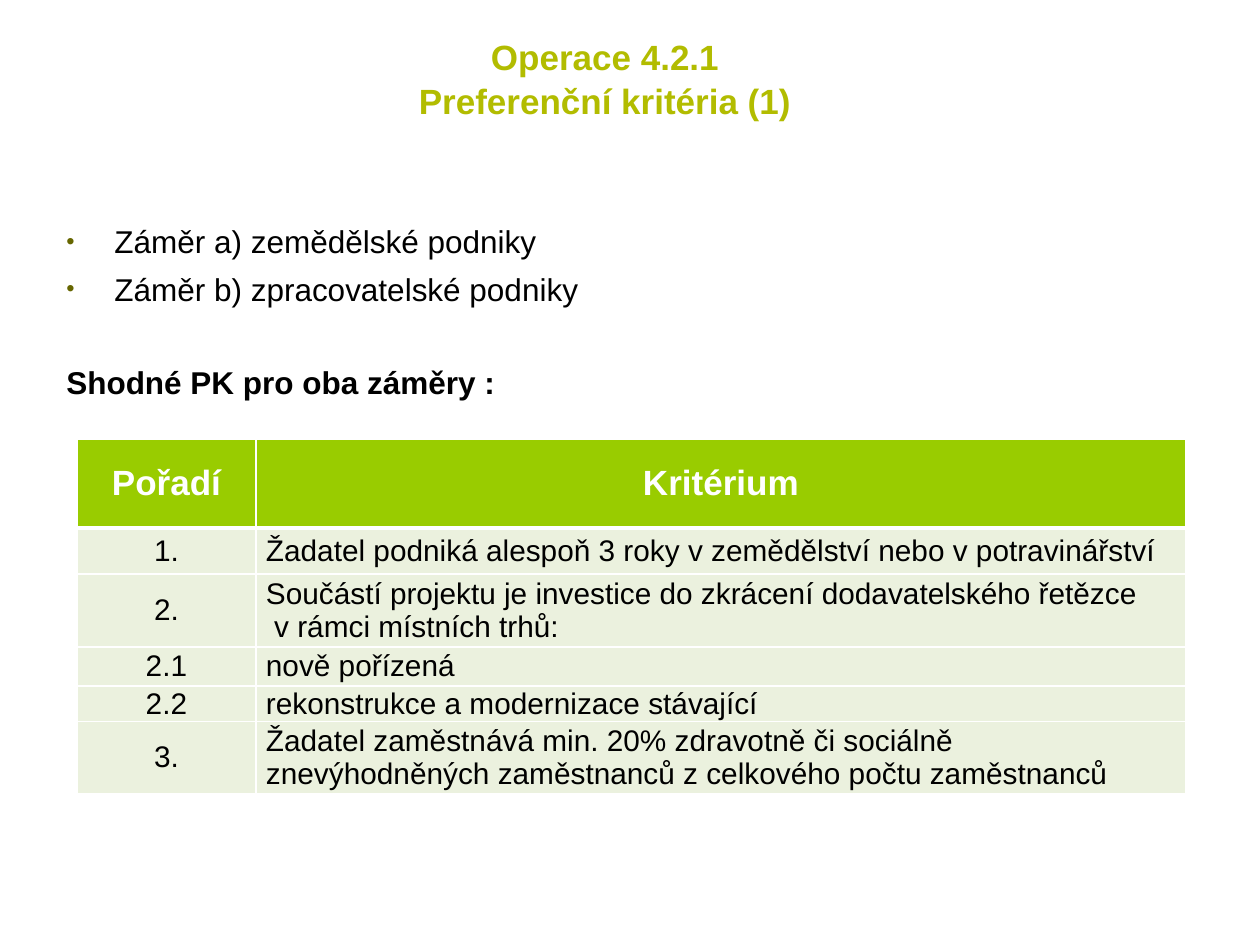
from lxml.etree import SubElement
from pptx import Presentation
from pptx.dml.color import RGBColor
from pptx.enum.text import MSO_ANCHOR, PP_ALIGN
from pptx.oxml.ns import qn
from pptx.util import Pt

PX = 914400 // 126
OLIVE = RGBColor(0xB2, 0xBC, 0x00)
GREEN = RGBColor(0x99, 0xCC, 0x00)
PALE = RGBColor(0xEB, 0xF1, 0xDE)
BLACK = RGBColor(0, 0, 0)
WHITE = RGBColor(0xFF, 0xFF, 0xFF)


def add_run(para, text, size, color, bold=False):
    run = para.add_run()
    run.text = text
    font = run.font
    font.name, font.size, font.bold = "Arial", Pt(size), bold
    font.color.rgb = color


def set_edges(cell, head, below):
    """Draw white cell borders, thick between the header and the row below."""
    props = cell._tc.get_or_add_tcPr()
    thick = {"lnT": below, "lnB": head}
    for spot, tag in enumerate(("lnL", "lnR", "lnT", "lnB")):
        width = Pt(2.95 if thick.get(tag) else 0.91)
        line = props.makeelement(qn(f"a:{tag}"), {"w": str(width)})
        fill = SubElement(line, qn("a:solidFill"))
        SubElement(fill, qn("a:srgbClr"), val=str(WHITE))
        props.insert(spot, line)


deck = Presentation()
deck.slide_width, deck.slide_height = 1260 * PX, 945 * PX
slide = deck.slides.add_slide(deck.slide_layouts[5])

# Title
title = slide.shapes.title
title.left, title.top, title.width, title.height = 94 * PX, 34 * PX, 1022 * PX, 195 * PX
frame = title.text_frame
frame.vertical_anchor = MSO_ANCHOR.TOP
frame.margin_top = 0
para = frame.paragraphs[0]
para.alignment = PP_ALIGN.CENTER
para.line_spacing = 1.04
add_run(para, "Operace 4.2.1", 20, OLIVE, True)
para.add_line_break()
add_run(para, "Preferenční kritéria (1)", 20, OLIVE, True)

# Intro: text, space before, bullet
intro = [
    ("Záměr a) zemědělské podniky", 0, True),
    ("Záměr b) zpracovatelské podniky", 5.5, True),
    ("Shodné PK pro oba záměry :", 32, False),
]
box = slide.shapes.add_textbox(54 * PX, 216 * PX, 1134 * PX, 208 * PX)
frame = box.text_frame
frame.word_wrap = True
for i, (text, space, bullet) in enumerate(intro):
    para = frame.paragraphs[0] if i == 0 else frame.add_paragraph()
    para.space_before = Pt(space)
    if bullet:
        props = para._p.get_or_add_pPr()
        props.set("marL", str(48 * PX))
        props.set("indent", str(-48 * PX))
        color = SubElement(props, qn("a:buClr"))
        SubElement(color, qn("a:srgbClr"), val="666600")
        SubElement(props, qn("a:buSzPct"), val="75000")
        SubElement(props, qn("a:buFont"), typeface="Arial")
        SubElement(props, qn("a:buChar"), char="•")
    add_run(para, text, 18, BLACK, not bullet)

# Criteria: height, rank, lines of the criterion
rows = [
    (89, "Pořadí", ["Kritérium"]),
    (46, "1.", ["Žadatel podniká alespoň 3 roky v zemědělství nebo v potravinářství"]),
    (73, "2.", ["Součástí projektu je investice do zkrácení dodavatelského řetězce",
                " v rámci místních trhů:"]),
    (39, "2.1", ["nově pořízená"]),
    (34, "2.2", ["rekonstrukce a modernizace stávající"]),
    (66, "3.", ["Žadatel zaměstnává min. 20% zdravotně či sociálně "
                "znevýhodněných zaměstnanců z celkového počtu zaměstnanců"]),
]
total = sum(row[0] for row in rows)
table = slide.shapes.add_table(len(rows), 2, 77 * PX, 439 * PX, 1109 * PX, total * PX).table
table.horz_banding = False
for col, width in zip(table.columns, (179, 930)):
    col.width = width * PX
for r, (height, rank, lines) in enumerate(rows):
    table.rows[r].height = height * PX
    head = r == 0
    for c, texts in enumerate(([rank], lines)):
        cell = table.cell(r, c)
        cell.fill.solid()
        cell.fill.fore_color.rgb = GREEN if head else PALE
        set_edges(cell, head, r == 1)
        cell.vertical_anchor = MSO_ANCHOR.MIDDLE
        cell.margin_left = cell.margin_right = 10 * PX
        cell.margin_top = cell.margin_bottom = 0
        for i, text in enumerate(texts):
            frame = cell.text_frame
            para = frame.paragraphs[0] if i == 0 else frame.add_paragraph()
            para.alignment = PP_ALIGN.CENTER if head or c == 0 else PP_ALIGN.LEFT
            add_run(para, text, 20 if head else 17, WHITE if head else BLACK, head)

deck.save("out.pptx")
